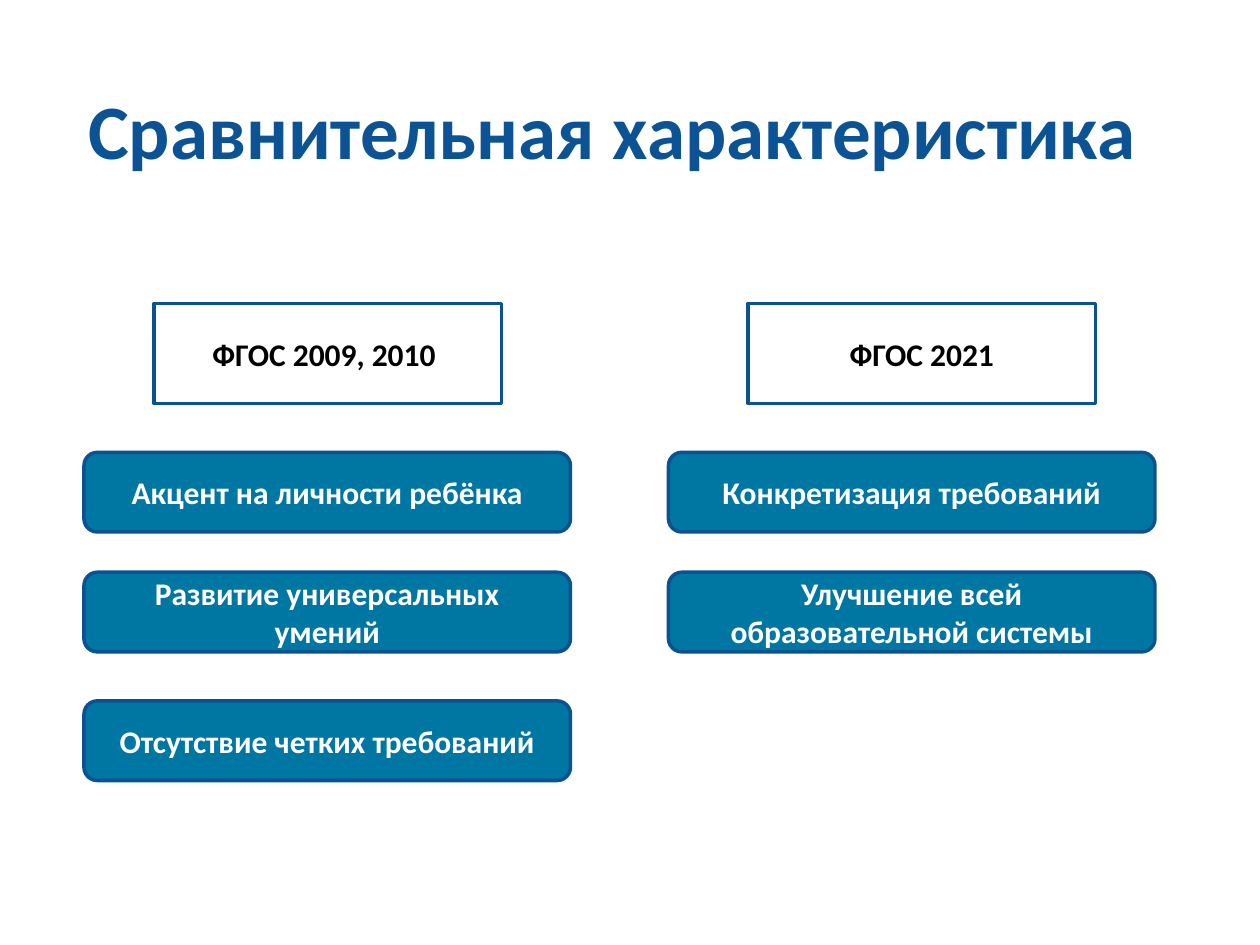
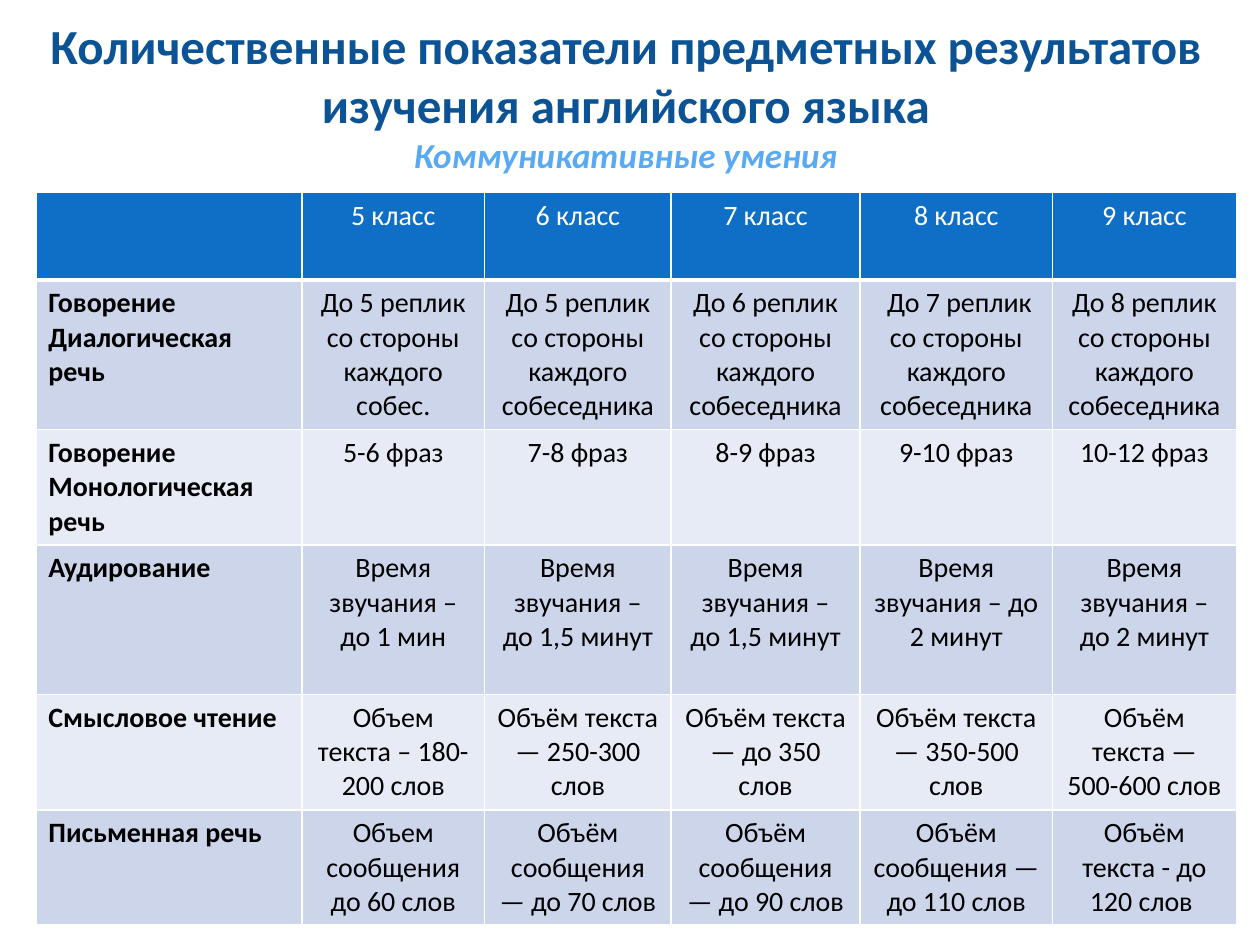
from dataclasses import dataclass

from lxml.etree import SubElement
from pptx import Presentation
from pptx.dml.color import RGBColor
from pptx.enum.shapes import MSO_SHAPE
from pptx.enum.text import MSO_ANCHOR, MSO_AUTO_SIZE, PP_ALIGN
from pptx.oxml.ns import qn
from pptx.util import Pt


@dataclass(frozen=True)
class Theme:
    font: str = "Calibri"
    title: str = "0B5394"
    subtitle: str = "59AAF2"
    outline: str = "0B5292"
    feature: str = "0076A3"
    table_header: str = "0F6FC6"
    bands: tuple = ("CCD5EA", "E7EBF5")
    light: str = "FFFFFF"
    dark: str = "000000"
    main_title_size: int = 44
    table_title_size: int = 28
    subtitle_size: int = 20
    box_size: int = 18
    cell_size: int = 16


THEME = Theme()
TITLE_ONLY_LAYOUT = 5

# Each column: heading left, heading, features left, features
COMPARISON = (
    (88, "ФГОС 2009, 2010 ", 48, (
        "Акцент на личности ребёнка",
        "Развитие универсальных умений",
        "Отсутствие четких требований")),
    (427.5, "ФГОС 2021", 382, (
        "Конкретизация требований",
        "Улучшение всей образовательной системы")),
)
FEATURE_TOPS = (258.5, 327, 400.5)

COLUMN_WIDTHS = (152, 104.5, 106.5, 108, 110, 105)
ROW_HEIGHTS = (50, 85.5, 65.5, 85.5, 65.5, 65.5)
SKILLS = (
    ("", *(f"{grade} класс" for grade in range(5, 10))),
    ("Говорение\nДиалогическая речь",
     "До 5 реплик со стороны каждого собес.",
     "До 5 реплик со стороны каждого собеседника",
     "До 6 реплик со стороны каждого собеседника",
     " До 7 реплик со стороны каждого собеседника",
     "До 8 реплик со стороны каждого собеседника"),
    ("Говорение\nМонологическая речь",
     *(f"{count} фраз" for count in ("5-6", "7-8", "8-9", "9-10", "10-12"))),
    ("Аудирование",
     *(f"Время звучания – до {time}" for time in
       ("1 мин", "1,5 минут", "1,5 минут", "2 минут", "2 минут"))),
    ("Смысловое чтение",
     "Объем текста – 180-200 слов",
     *(f"Объём текста — {count} слов" for count in
       ("250-300", "до 350", "350-500", "500-600"))),
    ("Письменная речь",
     "Объем сообщения до 60 слов",
     *(f"Объём сообщения — до {count} слов" for count in (70, 90, 110)),
     "Объём текста - до 120 слов "),
)


def apply_values(target, values):
    for name, value in values.items():
        setattr(target, name, value)


def format_font(font, size, color, bold=False, italic=False):
    apply_values(font, {"name": THEME.font, "size": Pt(size),
                        "bold": bold, "italic": italic})
    font.color.rgb = RGBColor.from_string(color)


def set_fill(target, color):
    target.fill.solid()
    target.fill.fore_color.rgb = RGBColor.from_string(color)


def write_text(frame, text, alignment, size, color, bold=False):
    frame.text = text
    for paragraph in frame.paragraphs:
        paragraph.alignment = alignment
        for run in paragraph.runs:
            format_font(run.font, size, color, bold)


def set_title(slide, text, size, left, top, width, height):
    title = slide.shapes.title
    apply_values(title, {"left": Pt(left), "top": Pt(top),
                         "width": Pt(width), "height": Pt(height)})
    frame = title.text_frame
    apply_values(frame, {"word_wrap": True, "auto_size": MSO_AUTO_SIZE.NONE,
                         "vertical_anchor": MSO_ANCHOR.MIDDLE})
    write_text(frame, text, PP_ALIGN.CENTER, size, THEME.title, bold=True)
    return frame.paragraphs[0]


def add_subtitle_line(paragraph, text, break_size):
    """Continue a title on a new line; the break keeps the title's line height."""
    paragraph.add_line_break()
    line_break = paragraph._p.findall(qn("a:br"))[-1]
    SubElement(line_break, qn("a:rPr"), sz=str(break_size * 100))
    run = paragraph.add_run()
    run.text = text
    format_font(run.font, THEME.subtitle_size, THEME.subtitle,
                bold=True, italic=True)


def add_box(slide, kind, text, bounds, fill, text_color):
    shape = slide.shapes.add_shape(kind, *map(Pt, bounds))
    shape.shadow.inherit = False
    set_fill(shape, fill)
    shape.line.color.rgb = RGBColor.from_string(THEME.outline)
    shape.line.width = Pt(2)
    apply_values(shape.text_frame, {"word_wrap": True,
                                    "vertical_anchor": MSO_ANCHOR.MIDDLE})
    write_text(shape.text_frame, text, PP_ALIGN.CENTER,
               THEME.box_size, text_color, bold=True)


def set_borders(cell, bottom_width):
    """Draw light borders; they must precede the fill in the cell properties."""
    properties = cell._tc.get_or_add_tcPr()
    for side, width in (("L", 1), ("R", 1), ("T", 1), ("B", bottom_width)):
        line = SubElement(properties, qn(f"a:ln{side}"), w=str(Pt(width)))
        fill = SubElement(line, qn("a:solidFill"))
        SubElement(fill, qn("a:srgbClr"), val=THEME.light)


def format_cell(cell, text, row, column):
    is_header = row == 0
    is_label = column == 0
    set_borders(cell, bottom_width=3 if is_header else 1)
    set_fill(cell, THEME.table_header if is_header else THEME.bands[(row - 1) % 2])
    write_text(cell.text_frame, text,
               PP_ALIGN.LEFT if is_label else PP_ALIGN.CENTER,
               THEME.cell_size, THEME.light if is_header else THEME.dark,
               bold=is_label)


def add_table(slide, rows, left, top):
    table = slide.shapes.add_table(
        len(rows), len(rows[0]), Pt(left), Pt(top),
        Pt(sum(COLUMN_WIDTHS)), Pt(sum(ROW_HEIGHTS))).table
    for column, width in zip(table.columns, COLUMN_WIDTHS):
        column.width = Pt(width)
    for row, height in zip(table.rows, ROW_HEIGHTS):
        row.height = Pt(height)
    for row, texts in enumerate(rows):
        for column, text in enumerate(texts):
            format_cell(table.cell(row, column), text, row, column)


def add_title_slide(presentation):
    return presentation.slides.add_slide(
        presentation.slide_layouts[TITLE_ONLY_LAYOUT])


def build_comparison(presentation):
    slide = add_title_slide(presentation)
    set_title(slide, "Сравнительная характеристика ",
              THEME.main_title_size, 31, 31.5, 648, 84.5)
    for heading_left, heading, left, features in COMPARISON:
        add_box(slide, MSO_SHAPE.RECTANGLE, heading,
                (heading_left, 173.5, 198.5, 57), THEME.light, THEME.dark)
        for top, feature in zip(FEATURE_TOPS, features):
            add_box(slide, MSO_SHAPE.ROUNDED_RECTANGLE, feature,
                    (left, top, 278, 45.5), THEME.feature, THEME.light)


def build_skills(presentation):
    slide = add_title_slide(presentation)
    size = THEME.table_title_size
    paragraph = set_title(
        slide, "Количественные показатели предметных результатов "
        "изучения английского языка", size, 14.5, 9.5, 686, 90)
    add_subtitle_line(paragraph, "Коммуникативные умения", size)
    add_table(slide, SKILLS, 20.5, 110)


def main():
    presentation = Presentation()
    presentation.slide_width = Pt(720)
    presentation.slide_height = Pt(540)
    build_comparison(presentation)
    build_skills(presentation)
    presentation.save("out.pptx")


if __name__ == "__main__":
    main()
